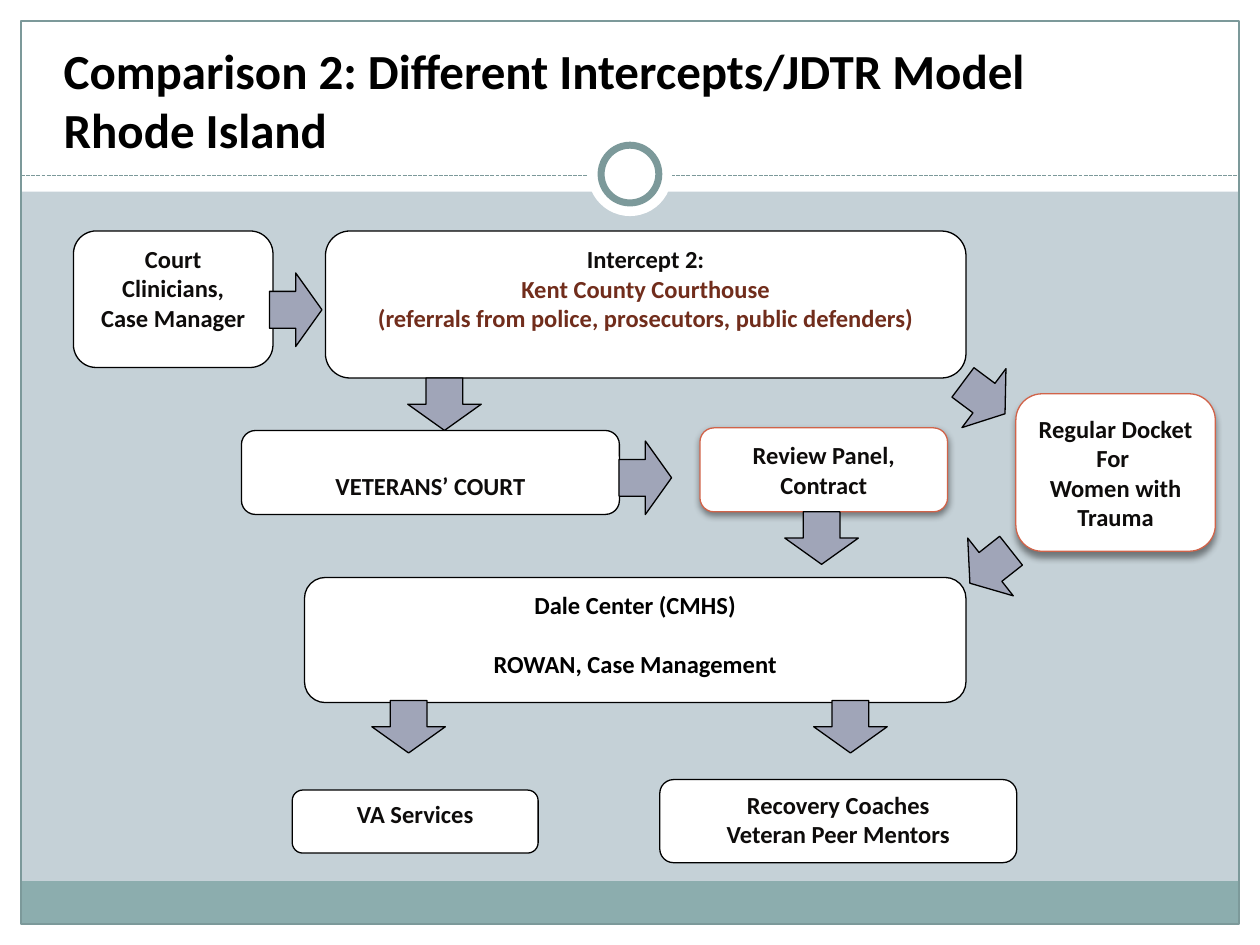
from lxml import etree
from pptx import Presentation, util as u
from pptx.dml.color import RGBColor
from pptx.enum import dml, shapes, text
from pptx.oxml.ns import qn

THEME = {
    "font": "Calibri", "title_size": 28, "body_size": 14,
    "background": "C5D1D7", "white": "FFFFFF", "black": "000000", "ink": "0E0C0B",
    "accent": "712D1C", "frame": "7C999A", "footer": "8CADAE",
    "arrow": "A0A5B8", "highlight": "D16349",
}
WIDTH, HEIGHT, MARGIN = 720, 540, 12
BLANK_LINE = 17  # height of one empty body line
ARROW_SIZE = (42, 30)

TITLE = "Comparison 2: Different Intercepts/JDTR Model\vRhode Island"

# Boxes: position and lines of (text, colour, space before)
PLAIN_BOXES = [
    {"at": (186, 132, 366, 84), "lines": [
        ("Intercept 2:", "ink", 0), ("Kent County Courthouse", "accent", 0),
        ("(referrals from police, prosecutors, public defenders)", "accent", 0)]},
    {"at": (138, 246, 216, 48), "top_gap": BLANK_LINE,
     "lines": [("VETERANS’ COURT", "ink", 0)]},
    {"at": (174, 330, 378, 71.5), "lines": [
        ("Dale Center (CMHS)", "black", 0),
        ("ROWAN, Case Management", "black", BLANK_LINE)]},
    {"at": (42, 132, 114, 78), "lines": [
        ("Court Clinicians,", "ink", 0), ("Case Manager", "ink", 0)]},
    {"at": (167, 451.5, 140.5, 36), "lines": [("VA Services", "ink", 0)]},
    {"at": (377, 445.5, 204, 47.5), "lines": [
        ("Recovery Coaches", "ink", 0), ("Veteran Peer Mentors", "ink", 0)]},
]
HIGHLIGHT_BOXES = [
    {"at": (580.5, 225, 114, 90), "shadow_distance": 3, "lines": [
        ("Regular Docket", "ink", 0), ("For ", "ink", 0),
        ("Women with Trauma", "ink", 0)]},
    {"at": (400, 244.5, 141.5, 48), "shadow_distance": 2, "lines": [
        ("Review Panel,", "ink", 0), ("Contract", "ink", 0)]},
]
# Arrows: centre x, centre y, rotation from pointing down
ARROWS = [
    (254, 231, 0), (562.3, 227.5, 306.7), (169, 177, 270), (368.8, 273, 270),
    (486, 415.3, 0), (233.5, 415.3, 0), (566, 324, 51.7), (469.5, 307.5, 0),
]


def colour(name):
    return RGBColor.from_string(THEME[name])


def add_shape(slide, kind, at, fill=None, line=None, line_width=0.75):
    shape = slide.shapes.add_shape(kind, *map(u.Pt, at))
    shape.shadow.inherit = False
    if fill:
        shape.fill.solid()
        shape.fill.fore_color.rgb = colour(fill)
    else:
        shape.fill.background()
    if line:
        shape.line.color.rgb = colour(line)
        shape.line.width = u.Pt(line_width)
    else:
        shape.line.fill.background()
    return shape


def style_run(run, size, ink):
    run.font.name = THEME["font"]
    run.font.size = u.Pt(THEME[size])
    run.font.bold = True
    run.font.color.rgb = colour(ink)


def add_shadow(shape, distance):
    effects = shape._element.spPr.find(qn("a:effectLst"))
    shadow = etree.SubElement(
        effects, qn("a:outerShdw"), blurRad=str(u.Pt(4)), dist=str(u.Pt(distance)),
        dir="5400000", rotWithShape="0")
    shade = etree.SubElement(shadow, qn("a:srgbClr"), val=THEME["black"])
    etree.SubElement(shade, qn("a:alpha"), val="44000")


def add_box(slide, box, line, anchor):
    shape = add_shape(slide, shapes.MSO_SHAPE.ROUNDED_RECTANGLE, box["at"], "white", line)
    frame = shape.text_frame
    frame.word_wrap = True
    frame.vertical_anchor = anchor
    frame.margin_top = u.Pt(3.6 + box.get("top_gap", 0))
    frame.text = "\n".join(words for words, _, _ in box["lines"])
    for paragraph, (_, ink, gap) in zip(frame.paragraphs, box["lines"]):
        paragraph.alignment = text.PP_ALIGN.CENTER
        paragraph.space_before = u.Pt(gap)
        style_run(paragraph.runs[0], "body_size", ink)
    return shape


def add_frame(slide):
    rectangle, oval = shapes.MSO_SHAPE.RECTANGLE, shapes.MSO_SHAPE.OVAL
    inner_width, inner_height = WIDTH - 2 * MARGIN, HEIGHT - 2 * MARGIN
    # White header and border strips
    for at in [(0, HEIGHT - MARGIN, WIDTH, MARGIN), (0, 0, WIDTH, 109.5),
               (0, 0, MARGIN, HEIGHT), (WIDTH - MARGIN, 0, MARGIN, HEIGHT)]:
        add_shape(slide, rectangle, at, "white")
    # Footer band and outline
    add_shape(slide, rectangle, (MARGIN, 503.5, inner_width, 24.5), "footer")
    add_shape(slide, rectangle, (MARGIN, MARGIN, inner_width, inner_height), line="frame")
    # Dashed divider
    ends = (MARGIN, 100.5, WIDTH - MARGIN, 100.5)
    divider = slide.shapes.add_connector(shapes.MSO_CONNECTOR.STRAIGHT, *map(u.Pt, ends))
    divider.line.color.rgb = colour("frame")
    divider.line.width = u.Pt(0.75)
    divider.line.dash_style = dml.MSO_LINE.SQUARE_DOT
    etree.SubElement(divider._element.spPr, qn("a:effectLst"))
    # Ring on the divider
    for size, line in [(48, None), (33, "frame")]:
        at = ((WIDTH - size) / 2, 99.5 - size / 2, size, size)
        add_shape(slide, oval, at, "white", line, 4)


def add_title(slide):
    shape = slide.shapes.add_textbox(*map(u.Pt, (29.3, 14.5, 653, 79.5)))
    frame = shape.text_frame
    frame.word_wrap = True
    frame.vertical_anchor = text.MSO_ANCHOR.BOTTOM
    paragraph = frame.paragraphs[0]
    paragraph.text = TITLE
    for run in paragraph.runs:
        style_run(run, "title_size", "black")


def main():
    presentation = Presentation()
    presentation.slide_width, presentation.slide_height = u.Pt(WIDTH), u.Pt(HEIGHT)
    slide = presentation.slides.add_slide(presentation.slide_layouts[6])
    slide.background.fill.solid()
    slide.background.fill.fore_color.rgb = colour("background")
    add_frame(slide)
    add_title(slide)

    # Flow chart boxes
    for box in PLAIN_BOXES:
        add_box(slide, box, "black", text.MSO_ANCHOR.TOP)
    for box in HIGHLIGHT_BOXES:
        shape = add_box(slide, box, "highlight", text.MSO_ANCHOR.MIDDLE)
        add_shadow(shape, box["shadow_distance"])

    # Flow arrows
    width, height = ARROW_SIZE
    for x, y, rotation in ARROWS:
        at = (x - width / 2, y - height / 2, width, height)
        arrow = add_shape(slide, shapes.MSO_SHAPE.DOWN_ARROW, at, "arrow", "black")
        arrow.rotation = rotation

    presentation.save("out.pptx")


if __name__ == "__main__":
    main()
